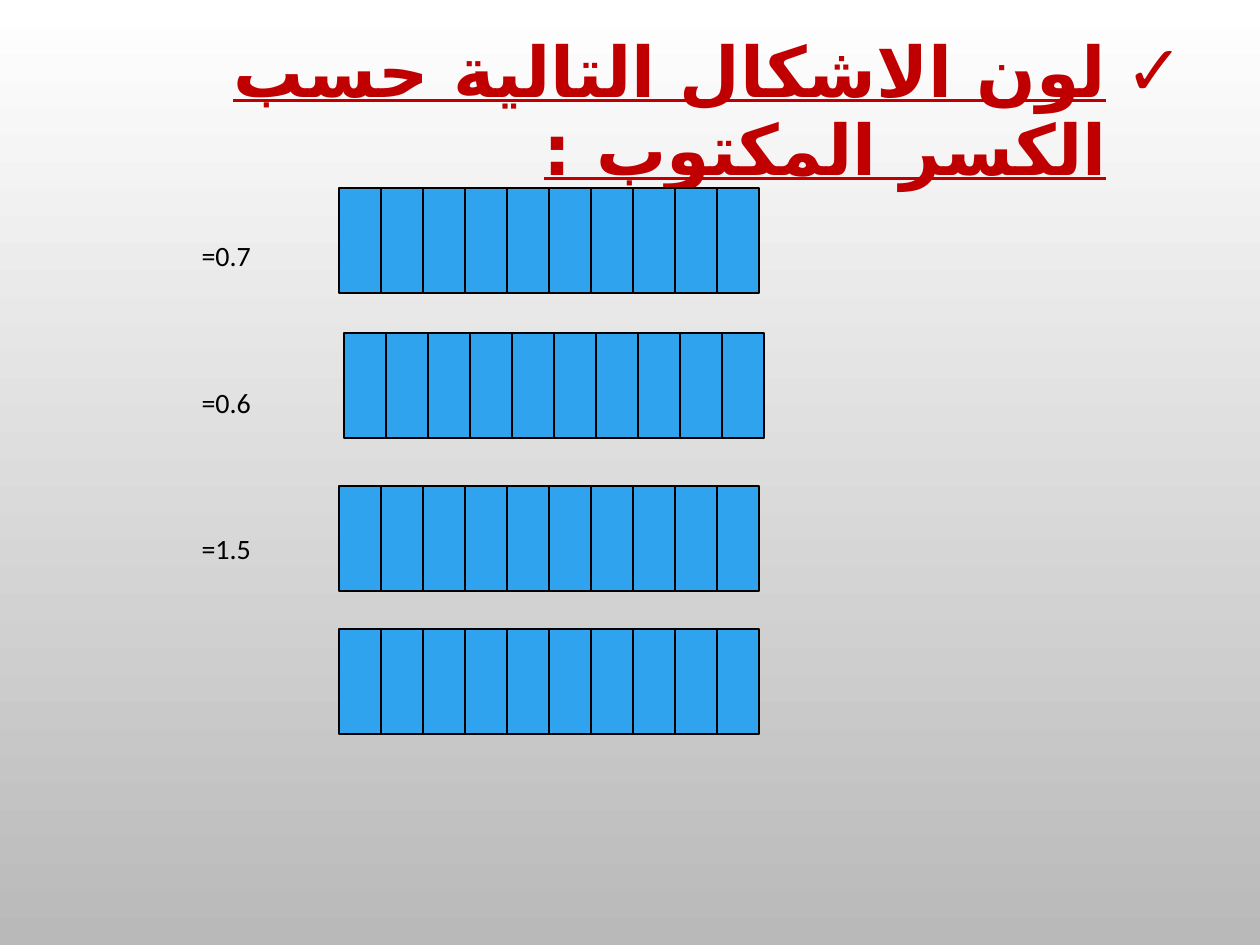
from lxml.etree import SubElement
from pptx import Presentation
from pptx.dml.color import RGBColor
from pptx.enum.shapes import MSO_SHAPE
from pptx.enum.text import MSO_ANCHOR, MSO_AUTO_SIZE, PP_ALIGN
from pptx.oxml.ns import qn
from pptx.util import Emu, Pt

TITLE = "لون الاشكال التالية حسب الكسر المكتوب :"
FRACTIONS = ["=0.7", "=0.6", "=1.5"]
BARS = [(339, 188), (344, 333), (339, 486), (339, 629)]
CELLS_PER_BAR = 10
CELL_WIDTH, CELL_HEIGHT = 42, 105
TITLE_BOX = (63, 34, 1134, 158)
FRACTIONS_BOX = (63, 226, 1071, 471)

THEME = {
    "font": "Calibri",
    "arabic_font": "DejaVu Sans",
    "title": RGBColor.from_string("C00000"),
    "text": RGBColor.from_string("000000"),
    "cell": RGBColor.from_string("2FA3EE"),
    "background": ["FFFFFF", "B9B9B9"],
    "title_size": Pt(40),
    "text_size": Pt(16),
    "line_width": Pt(0.75),
    "fraction_gap": Pt(60.5),
}


def px(value):
    return Emu(round(value * 914400 / 126))


def apply_format(target, **values):
    for name, value in values.items():
        setattr(target, name, value)


def place(shape, box):
    apply_format(shape, **dict(zip(("left", "top", "width", "height"), map(px, box))))


def set_bullet(paragraph, character, margin, indent):
    properties = paragraph._p.get_or_add_pPr()
    properties.set("marL", str(px(margin)))
    properties.set("indent", str(px(indent)))
    if character:
        SubElement(properties, qn("a:buFont"), typeface=THEME["arabic_font"])
        SubElement(properties, qn("a:buChar"), char=character)
    else:
        SubElement(properties, qn("a:buNone"))
    return properties


def paint_background(slide):
    fill = slide.background.fill
    fill.gradient()
    fill.gradient_angle = 270
    for position, (stop, color) in enumerate(zip(fill.gradient_stops, THEME["background"])):
        stop.position = position
        stop.color.rgb = RGBColor.from_string(color)


def write_title(shape):
    place(shape, TITLE_BOX)
    frame = shape.text_frame
    apply_format(frame, auto_size=MSO_AUTO_SIZE.NONE, vertical_anchor=MSO_ANCHOR.MIDDLE, word_wrap=True)
    paragraph = frame.paragraphs[0]
    set_bullet(paragraph, "✓", 78, -78).set("rtl", "1")
    apply_format(paragraph, alignment=PP_ALIGN.RIGHT, line_spacing=0.93)
    run = paragraph.add_run()
    run.text = TITLE
    apply_format(run.font, name=THEME["font"], size=THEME["title_size"], bold=True, underline=True)
    run.font.color.rgb = THEME["title"]
    SubElement(run.font._element, qn("a:cs"), typeface=THEME["arabic_font"])


def write_fractions(shape):
    place(shape, FRACTIONS_BOX)
    frame = shape.text_frame
    apply_format(frame, auto_size=MSO_AUTO_SIZE.NONE, vertical_anchor=MSO_ANCHOR.TOP, word_wrap=True)
    for index, fraction in enumerate(FRACTIONS):
        paragraph = frame.add_paragraph() if index else frame.paragraphs[0]
        set_bullet(paragraph, None, 158, -32)
        gap = THEME["fraction_gap"] if index else Pt(0)
        apply_format(paragraph, level=2, line_spacing=1.2, space_before=gap)
        run = paragraph.add_run()
        run.text = fraction
        apply_format(run.font, name=THEME["font"], size=THEME["text_size"])
        run.font.color.rgb = THEME["text"]


def draw_bar(slide, left, top):
    group = slide.shapes.add_group_shape()
    for index in range(CELLS_PER_BAR):
        box = (left + index * CELL_WIDTH, top, CELL_WIDTH, CELL_HEIGHT)
        cell = group.shapes.add_shape(MSO_SHAPE.RECTANGLE, *map(px, box))
        cell.shadow.inherit = False
        cell.fill.solid()
        cell.fill.fore_color.rgb = THEME["cell"]
        cell.line.color.rgb = THEME["text"]
        cell.line.width = THEME["line_width"]


def main():
    presentation = Presentation()
    apply_format(presentation, slide_width=px(1260), slide_height=px(945))
    slide = presentation.slides.add_slide(presentation.slide_layouts[1])
    paint_background(slide)
    write_title(slide.shapes.title)
    write_fractions(slide.placeholders[1])
    for left, top in BARS:
        draw_bar(slide, left, top)
    presentation.save("out.pptx")


if __name__ == "__main__":
    main()
